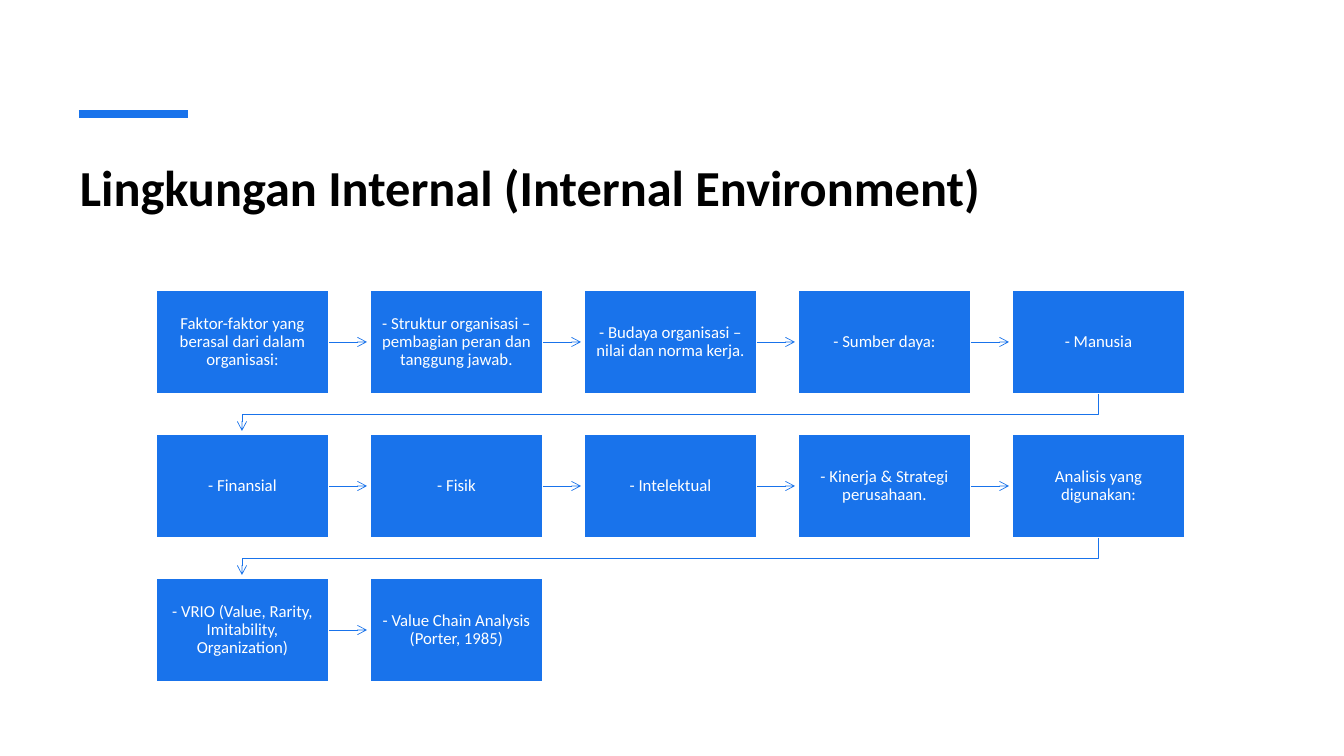
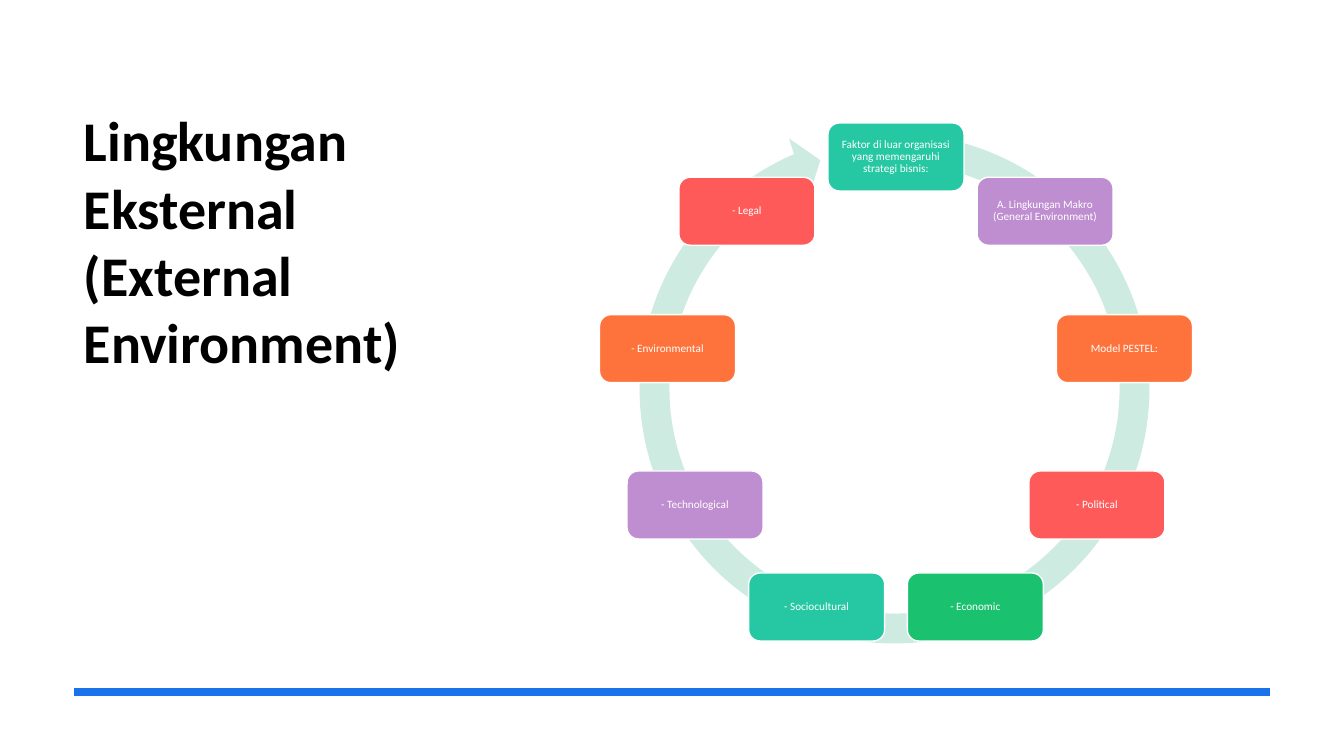
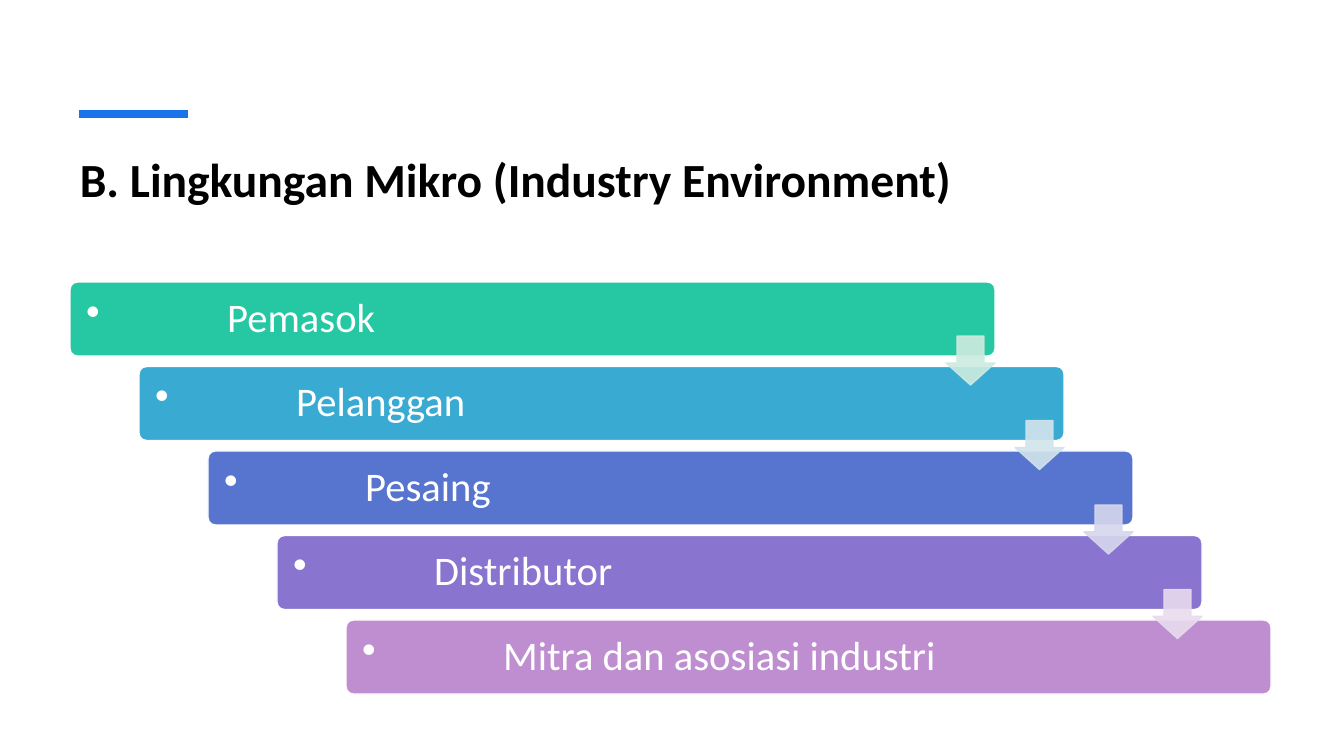
import math

from lxml import etree
from pptx import Presentation
from pptx import util as u
from pptx.dml.color import RGBColor
from pptx.enum import shapes, text
from pptx.oxml.ns import qn

PX = 12192000 / 1344
FONT = "Calibri"
COLOURS = {
    "blue": "1973EB", "white": "FFFFFF", "black": "000000",
    "teal": "25C8A2", "violet": "BF8ED1", "orange": "FE733C",
    "red": "FE5A5A", "green": "1AC16E", "sky": "39AAD1",
    "indigo": "5775CF", "purple": "8974CF", "mint": "CDEBE0",
    "pale sky": "D2E4EC", "pale indigo": "D7D7ED", "pale violet": "E8DBEE",
}

WIDE_TITLE = (70, 151, 1200, 121)
SIDE_TITLE = (74, 101, 405, 459)
SHORT_BAR = (79, 114, 188, 114)
LONG_BAR = (74, 692, 1270, 692)

INTERNAL_TITLE = "Lingkungan Internal (Internal Environment)"
INTERNAL_STEPS = [
    "Faktor-faktor yang berasal dari dalam organisasi:",
    "- Struktur organisasi – pembagian peran dan tanggung jawab.",
    "- Budaya organisasi – nilai dan norma kerja.",
    "- Sumber daya:",
    "- Manusia",
    "- Finansial",
    "- Fisik",
    "- Intelektual",
    "- Kinerja & Strategi perusahaan.",
    "Analisis yang digunakan:",
    "- VRIO (Value, Rarity, Imitability, Organization)",
    "- Value Chain Analysis (Porter, 1985)",
]

EXTERNAL_TITLE = "Lingkungan Eksternal (External Environment)"
EXTERNAL_FACTORS = [
    ("Faktor di luar organisasi yang memengaruhi strategi bisnis:", "teal"),
    ("A. Lingkungan Makro (General Environment)", "violet"),
    ("Model PESTEL:", "orange"),
    ("- Political", "red"),
    ("- Economic", "green"),
    ("- Sociocultural", "teal"),
    ("- Technological", "violet"),
    ("- Environmental", "orange"),
    ("- Legal", "red"),
]

INDUSTRY_TITLE = "B. Lingkungan Mikro (Industry Environment)"
INDUSTRY_ACTORS = [
    ("Pemasok", "teal", "mint"),
    ("Pelanggan", "sky", "pale sky"),
    ("Pesaing", "indigo", "pale indigo"),
    ("Distributor", "purple", "pale violet"),
    ("Mitra dan asosiasi industri", "violet", None),
]


def px(value):
    return u.Emu(round(value * PX))


def colour(name):
    return RGBColor.from_string(COLOURS[name])


def write(box, words, size, ink="white", bold=False, spacing=None,
          align=None, margins=None, hanging=0):
    frame = box.text_frame
    frame.word_wrap = True
    if margins:
        across, down = margins
        frame.margin_left = frame.margin_right = px(across)
        frame.margin_top = frame.margin_bottom = px(down)
    para = frame.paragraphs[0]
    if hanging:
        props = para._p.get_or_add_pPr()
        props.set("marL", str(px(hanging)))
        props.set("indent", str(-px(hanging)))
        etree.SubElement(props, qn("a:buChar"), char="•")
    para.alignment = align
    if spacing:
        para.line_spacing = spacing
    span = para.add_run()
    span.text = words
    span.font.name = FONT
    span.font.size = u.Pt(size)
    span.font.bold = bold
    span.font.color.rgb = colour(ink)


def add_title(page, words, place, size, spacing=None):
    box = page.shapes.add_textbox(*map(px, place))
    write(box, words, size, ink="black", bold=True, spacing=spacing)


def add_block(page, kind, place, fill, edge="white"):
    block = page.shapes.add_shape(kind, *map(px, place))
    block.shadow.inherit = False
    block.fill.solid()
    block.fill.fore_color.rgb = colour(fill)
    if edge:
        block.line.color.rgb = colour(edge)
        block.line.width = u.Pt(1)
    else:
        block.line.fill.background()
    block.text_frame.vertical_anchor = text.MSO_ANCHOR.MIDDLE
    return block


def style_line(line, width, arrow=False):
    line.color.rgb = colour("blue")
    line.width = u.Pt(width)
    if arrow:
        etree.SubElement(line._get_or_add_ln(), qn("a:tailEnd"), type="arrow")


def add_line(page, ends, width, arrow=False):
    link = page.shapes.add_connector(shapes.MSO_CONNECTOR.STRAIGHT, *map(px, ends))
    style_line(link.line, width, arrow)
    etree.SubElement(link._element.spPr, qn("a:effectLst"))
    return link


def add_return_arrow(page, points):
    start, *rest = points
    builder = page.shapes.build_freeform(*start, scale=PX)
    builder.add_line_segments(rest, close=False)
    route = builder.convert_to_shape()
    route.shadow.inherit = False
    route.fill.background()
    style_line(route.line, 0.5, arrow=True)


def build_internal(page):
    left, top, width, height = 156, 290, 173, 104
    step_x, step_y, columns, clearance = 214, 144, 5, 3
    add_line(page, SHORT_BAR, 6)
    add_title(page, INTERNAL_TITLE, WIDE_TITLE, 36)
    for index, words in enumerate(INTERNAL_STEPS):
        row, column = divmod(index, columns)
        x, y = left + column * step_x, top + row * step_y
        block = add_block(page, shapes.MSO_SHAPE.RECTANGLE, (x, y, width, height), "blue")
        write(block, words, 12, spacing=0.9, align=text.PP_ALIGN.CENTER, margins=(8, 9))
        if index == len(INTERNAL_STEPS) - 1:
            continue
        if column < columns - 1:
            middle = y + height / 2
            link = add_line(page, (x + width, middle, x + step_x - clearance, middle), 0.5, True)
            link.begin_connect(block, 3)
        else:
            bottom, next_top = y + height, y + step_y
            start_x, end_x = x + width / 2, left + width / 2
            turn = (bottom + next_top) / 2
            add_return_arrow(page, [(start_x, bottom), (start_x, turn),
                                    (end_x, turn), (end_x, next_top - clearance)])


def build_external(page):
    centre_x, centre_y, radius = 896, 389, 232
    width, height = 136, 68
    add_title(page, EXTERNAL_TITLE, SIDE_TITLE, 40)
    add_line(page, LONG_BAR, 6)
    ring = add_block(page, shapes.MSO_SHAPE.CIRCULAR_ARROW, (623, 117, 543, 543), "mint", None)
    for index, value in enumerate((0.055, 3.307, 147.891, 167.953, 0.058)):
        ring.adjustments[index] = value
    for index, (words, fill) in enumerate(EXTERNAL_FACTORS):
        angle = math.tau * index / len(EXTERNAL_FACTORS)
        x = centre_x + radius * math.sin(angle) - width / 2
        y = centre_y - radius * math.cos(angle) - height / 2
        block = add_block(page, shapes.MSO_SHAPE.ROUNDED_RECTANGLE, (x, y, width, height), fill)
        write(block, words, 8, spacing=0.9, align=text.PP_ALIGN.CENTER, margins=(6, 6))


def build_industry(page):
    left, top, width, height = 70, 282, 925, 74
    step_x, step_y, arrow_size = 69, 84.5, 49
    add_title(page, INDUSTRY_TITLE, WIDE_TITLE, 34, spacing=0.9)
    add_line(page, SHORT_BAR, 6)
    places = [(left + i * step_x, top + i * step_y) for i in range(len(INDUSTRY_ACTORS))]
    for (x, y), (words, fill, _) in zip(places, INDUSTRY_ACTORS):
        bar = add_block(page, shapes.MSO_SHAPE.ROUNDED_RECTANGLE, (x, y, width, height), fill)
        bar.adjustments[0] = 0.1
        write(bar, words, 29, spacing=0.9, align=text.PP_ALIGN.LEFT,
              margins=(14, 12), hanging=141)
    for (x, y), (_, _, tint) in zip(places, INDUSTRY_ACTORS):
        if not tint:
            continue
        place = (x + width - arrow_size, y + 54, arrow_size, arrow_size)
        arrow = add_block(page, shapes.MSO_SHAPE.DOWN_ARROW, place, tint, tint)
        arrow.adjustments[0] = 0.55
        arrow.adjustments[1] = 0.45
        for shade in arrow._element.spPr.iter(qn("a:srgbClr")):
            etree.SubElement(shade, qn("a:alpha"), val="90000")


def main():
    deck = Presentation()
    deck.slide_width, deck.slide_height = px(1344), px(756)
    for build in (build_internal, build_external, build_industry):
        build(deck.slides.add_slide(deck.slide_layouts[6]))
    deck.save("out.pptx")


if __name__ == "__main__":
    main()
